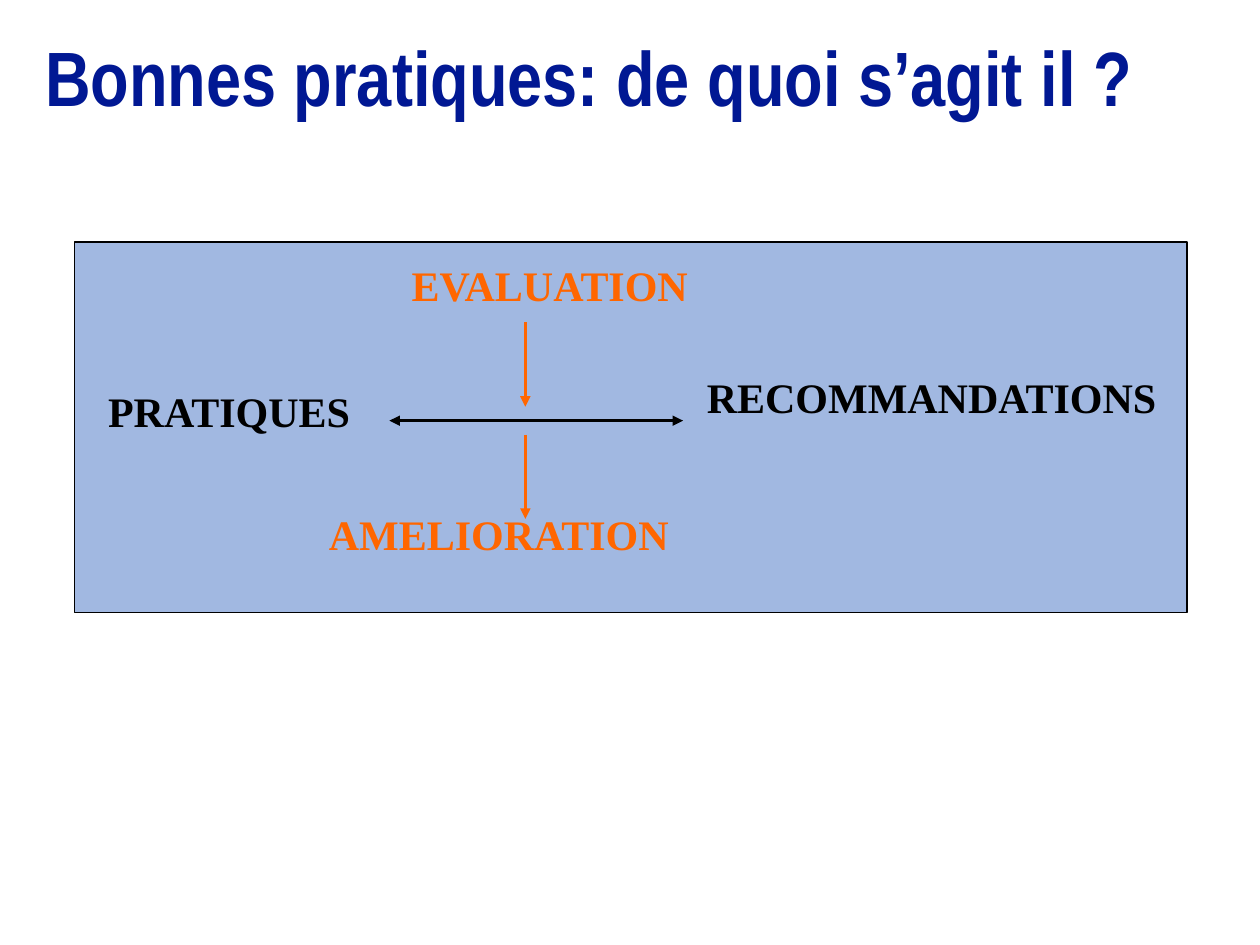
import pptx
import pptx.util
import pptx.dml.color
import pptx.enum.shapes
import pptx.enum.text
import pptx.oxml
import pptx.oxml.ns

Cm = pptx.util.Cm
Pt = pptx.util.Pt
COLORS = {"title": "011893", "panel": "4472C4", "black": "000000", "orange": "FF6600"}


def rgb(name):
    return pptx.dml.color.RGBColor.from_string(COLORS[name])


def add_text(text, left, top, width, height, font="Times New Roman", size=24,
             color="black", wrap=False, anchor="TOP", spacing=None):
    box = slide.shapes.add_textbox(Cm(left), Cm(top), Cm(width), Cm(height))
    frame = box.text_frame
    frame.word_wrap = wrap
    frame.vertical_anchor = pptx.enum.text.MSO_ANCHOR[anchor]
    line = frame.paragraphs[0]
    line.line_spacing = spacing
    words = line.add_run()
    words.text = text
    words.font.name = font
    words.font.size = Pt(size)
    words.font.bold = True
    words.font.color.rgb = rgb(color)


deck = pptx.Presentation()
deck.slide_width, deck.slide_height = Cm(25.4), Cm(19.05)
slide = deck.slides.add_slide(deck.slide_layouts[6])

# Half-transparent panel behind the diagram
panel = slide.shapes.add_shape(pptx.enum.shapes.MSO_SHAPE.RECTANGLE,
                               Cm(1.5), Cm(4.88), Cm(22.43), Cm(7.47))
panel.shadow.inherit = False
panel.fill.solid()
panel.fill.fore_color.rgb = rgb("panel")
panel.line.color.rgb = rgb("black")
panel.line.width = Pt(0.75)
tint = panel.fill._xPr.find(".//" + pptx.oxml.ns.qn("a:srgbClr"))
tint.append(pptx.oxml.parse_xml(
    f'<a:alpha {pptx.oxml.ns.nsdecls("a")} val="50000"/>'))

# Arrows: practice to and from recommendations, evaluation down to improvement
axis = 10.59
for x1, y1, x2, y2, color, ends in [
    (7.85, 8.48, 13.77, 8.48, "black", ["headEnd", "tailEnd"]),
    (axis, 6.5, axis, 8.2, "orange", ["tailEnd"]),
    (axis, 8.76, axis, 10.46, "orange", ["tailEnd"]),
]:
    arrow = slide.shapes.add_connector(pptx.enum.shapes.MSO_CONNECTOR.STRAIGHT,
                                       Cm(x1), Cm(y1), Cm(x2), Cm(y2))
    arrow.line.color.rgb = rgb(color)
    arrow.line.width = Pt(2)
    for end in ends:
        arrow.line._get_or_add_ln().append(pptx.oxml.parse_xml(
            f'<a:{end} {pptx.oxml.ns.nsdecls("a")} type="triangle"/>'))
    arrow._element.spPr.append(pptx.oxml.parse_xml(
        f'<a:effectLst {pptx.oxml.ns.nsdecls("a")}/>'))

# Labels
add_text("PRATIQUES", 1.93, 7.65, 5.46, 1.65)
add_text("RECOMMANDATIONS", 14, 7.37, 9.65, 1.65)
add_text("EVALUATION", 8.05, 5.11, 6.25, 1.65, color="orange")
add_text("AMELIORATION", 6.38, 10.13, 17.58, 1.65, color="orange", wrap=True)

# Title
add_text("Bonnes pratiques: de quoi s’agit il ?", 0.66, 0.89, 22.99, 1.5,
         font="Arial Narrow", size=44, color="title", wrap=True,
         anchor="MIDDLE", spacing=0.9)

deck.save("out.pptx")
